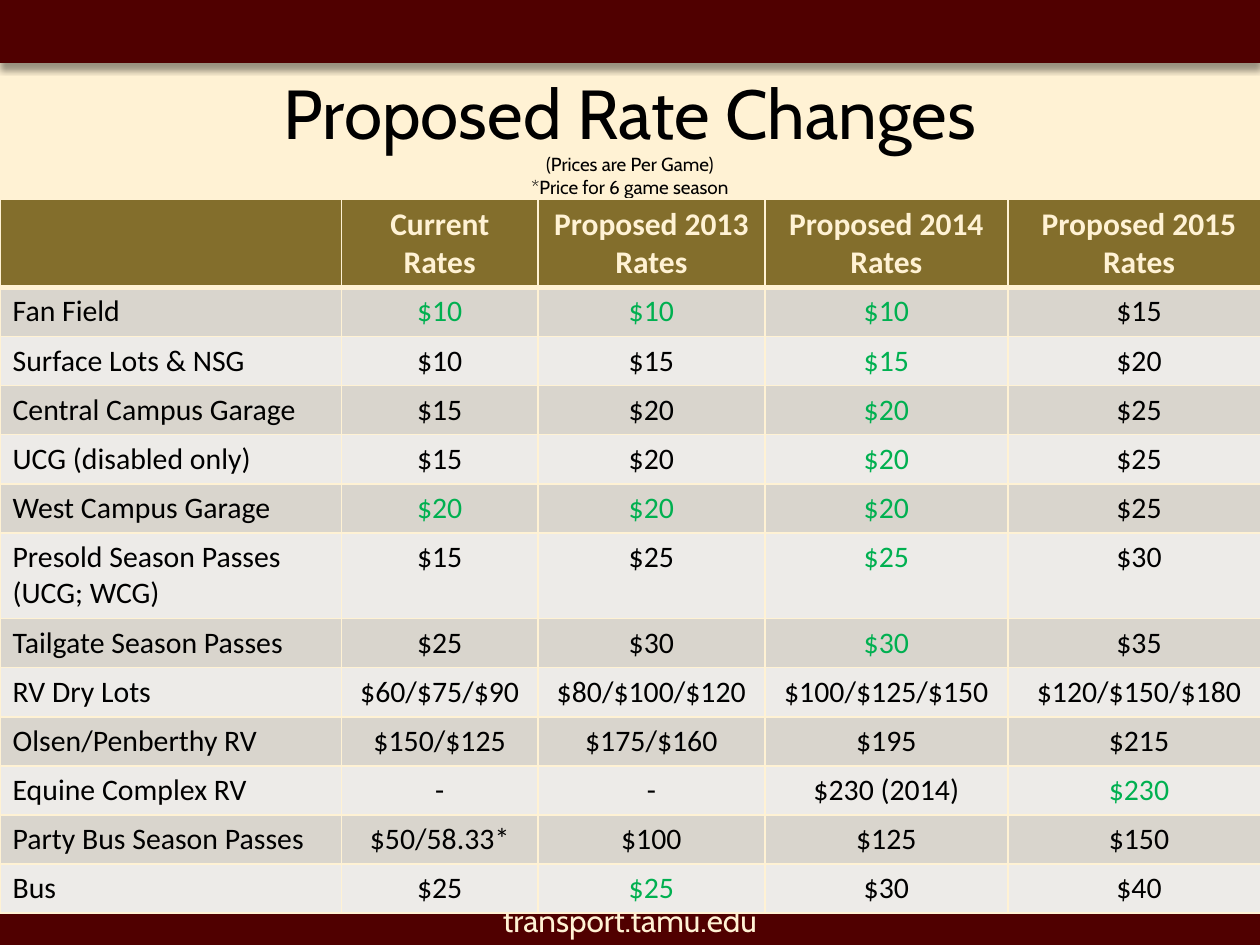
from lxml import etree
from pptx import Presentation
from pptx.dml.color import RGBColor
from pptx.enum.shapes import MSO_SHAPE
from pptx.enum.text import MSO_ANCHOR, PP_ALIGN
from pptx.oxml import parse_xml
from pptx.util import Inches, Pt

RECTANGLE = MSO_SHAPE.RECTANGLE
MIDDLE = MSO_ANCHOR.MIDDLE
LEFT, CENTER = PP_ALIGN.LEFT, PP_ALIGN.CENTER
NS = "http://schemas.openxmlformats.org/drawingml/2006/main"
COLORS = {
    "cream": "FFF2D4",
    "maroon": "500000",
    "olive": "836E2C",
    "dark_band": "D9D5CD",
    "light_band": "EDEBE8",
    "black": "000000",
    "green": "00B050",
}


def write(paragraph, text, size, font="Calibri", color="black", bold=False, align=CENTER):
    paragraph.alignment = align
    for index, line in enumerate(text.split("\n")):
        if index:
            paragraph.add_line_break()
        run = paragraph.add_run()
        run.text = line
        run.font.name = font
        run.font.size = Pt(size)
        run.font.bold = bold
        run.font.color.rgb = RGBColor.from_string(COLORS[color])


def add_bar(top, height):
    bar = slide.shapes.add_shape(RECTANGLE, 0, Inches(top), Inches(10), Inches(height))
    bar.shadow.inherit = False
    bar.fill.solid()
    bar.fill.fore_color.rgb = RGBColor.from_string(COLORS["maroon"])
    bar.line.fill.background()
    return bar


prs = Presentation()
prs.slide_width, prs.slide_height = Inches(10), Inches(7.5)
slide = prs.slides.add_slide(prs.slide_layouts[6])
slide.background.fill.solid()
slide.background.fill.fore_color.rgb = RGBColor.from_string(COLORS["cream"])

banner = add_bar(0, 0.5)
effects = banner.element.spPr.find(f"{{{NS}}}effectLst")
effects.append(parse_xml(
    f'<a:outerShdw xmlns:a="{NS}" blurRad="{Pt(4)}" dist="{Pt(3)}" dir="5400000" rotWithShape="0">'
    f'<a:srgbClr val="{COLORS["black"]}"><a:alpha val="40000"/></a:srgbClr></a:outerShdw>'
))

footer = add_bar(7.1, 0.4)
footer.text_frame.vertical_anchor = MIDDLE
write(footer.text_frame.paragraphs[0], "transport.tamu.edu", 18, font="Cabin", color="cream")

title = slide.shapes.add_textbox(Inches(0.5), Inches(0.58), Inches(9), Inches(0.97)).text_frame
title.word_wrap = True
title.vertical_anchor = MIDDLE
heading = title.paragraphs[0]
write(heading, "Proposed Rate Changes", 39.6, font="Cabin")
heading.add_line_break()
write(heading, "(Prices are Per Game)\n*Price for 6 game season", 10.8, font="Cabin")

rates = [
    ["", "Current Rates", "Proposed 2013 Rates", "Proposed 2014 Rates", "Proposed 2015 Rates"],
    ["Fan Field", "$10", "$10", "$10", "$15"],
    ["Surface Lots & NSG", "$10", "$15", "$15", "$20"],
    ["Central Campus Garage", "$15", "$20", "$20", "$25"],
    ["UCG (disabled only)", "$15", "$20", "$20", "$25"],
    ["West Campus Garage", "$20", "$20", "$20", "$25"],
    ["Presold Season Passes (UCG; WCG)", "$15", "$25", "$25", "$30"],
    ["Tailgate Season Passes", "$25", "$30", "$30", "$35"],
    ["RV Dry Lots", "$60/$75/$90", "$80/$100/$120", "$100/$125/$150", "$120/$150/$180"],
    ["Olsen/Penberthy RV", "$150/$125", "$175/$160", "$195", "$215"],
    ["Equine Complex RV", "-", "-", "$230 (2014)", "$230"],
    ["Party Bus Season Passes", "$50/58.33*", "$100", "$125", "$150"],
    ["Bus", "$25", "$25", "$30", "$40"],
]
green_columns = {
    "Fan Field": (1, 2, 3),
    "Surface Lots & NSG": (3,),
    "Central Campus Garage": (3,),
    "UCG (disabled only)": (3,),
    "West Campus Garage": (1, 2, 3),
    "Presold Season Passes (UCG; WCG)": (3,),
    "Tailgate Season Passes": (3,),
    "Equine Complex RV": (4,),
    "Bus": (2,),
}
column_widths = [2.71, 1.56, 1.8, 1.93, 2.08]
row_heights = [0.7] + [0.39] * 5 + [0.68] + [0.39] * 6

rate_table = slide.shapes.add_table(
    len(rates), len(column_widths), 0, Inches(1.58),
    Inches(sum(column_widths)), Inches(sum(row_heights)),
).table
for column, width in zip(rate_table.columns, column_widths):
    column.width = Inches(width)
for row, height in zip(rate_table.rows, row_heights):
    row.height = Inches(height)

for r, values in enumerate(rates):
    band = "olive" if r == 0 else "dark_band" if r % 2 else "light_band"
    for c, value in enumerate(values):
        cell = rate_table.cell(r, c)
        cell.fill.solid()
        cell.fill.fore_color.rgb = RGBColor.from_string(COLORS[band])
        if r == 0:
            if value:
                write(cell.text_frame.paragraphs[0], value, 18, color="cream", bold=True)
        else:
            ink = "green" if c in green_columns.get(values[0], ()) else "black"
            write(cell.text_frame.paragraphs[0], value, 17, color=ink, align=CENTER if c else LEFT)
        properties = cell._tc.get_or_add_tcPr()
        for position, side in enumerate("LRTB"):
            thick = (r, side) in ((0, "B"), (1, "T"))
            border = etree.Element(f"{{{NS}}}ln{side}", w=str(Pt(3 if thick else 1)))
            paint = etree.SubElement(border, f"{{{NS}}}solidFill")
            etree.SubElement(paint, f"{{{NS}}}srgbClr", val=COLORS["cream"])
            properties.insert(position, border)

prs.save("out.pptx")
